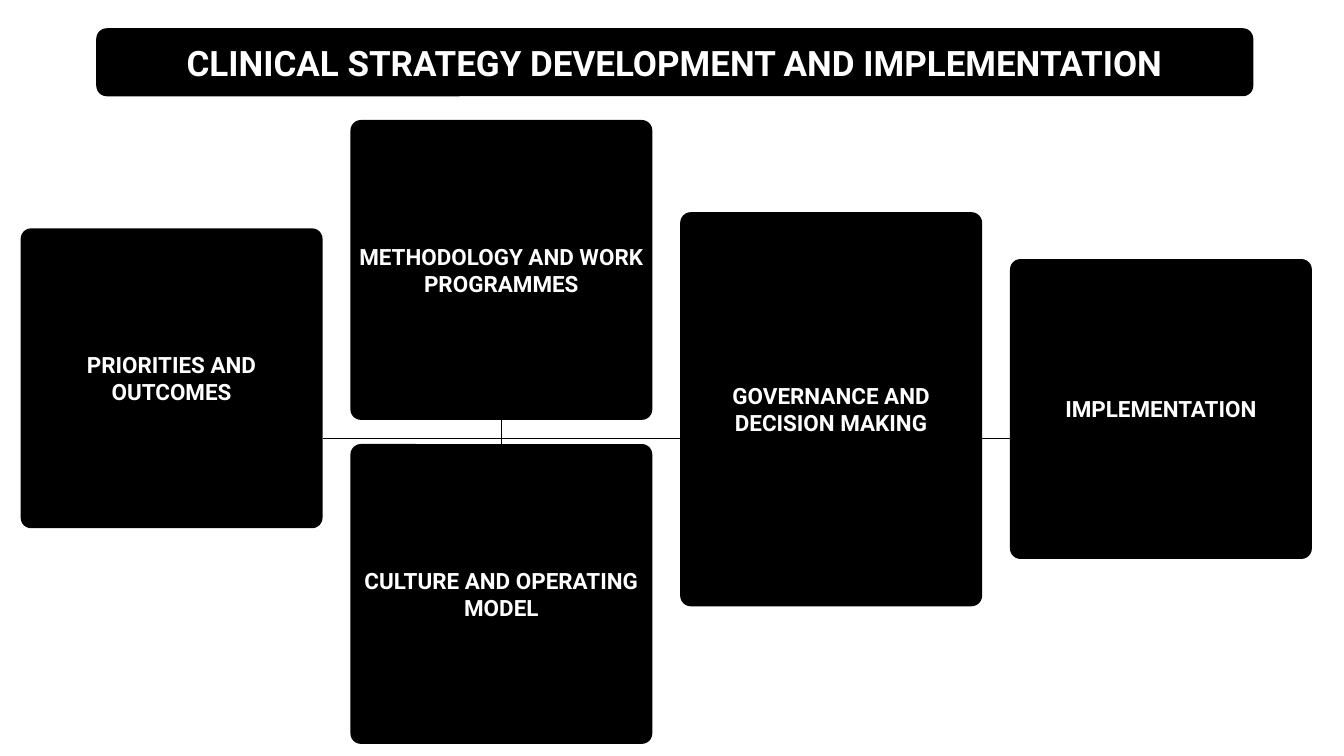
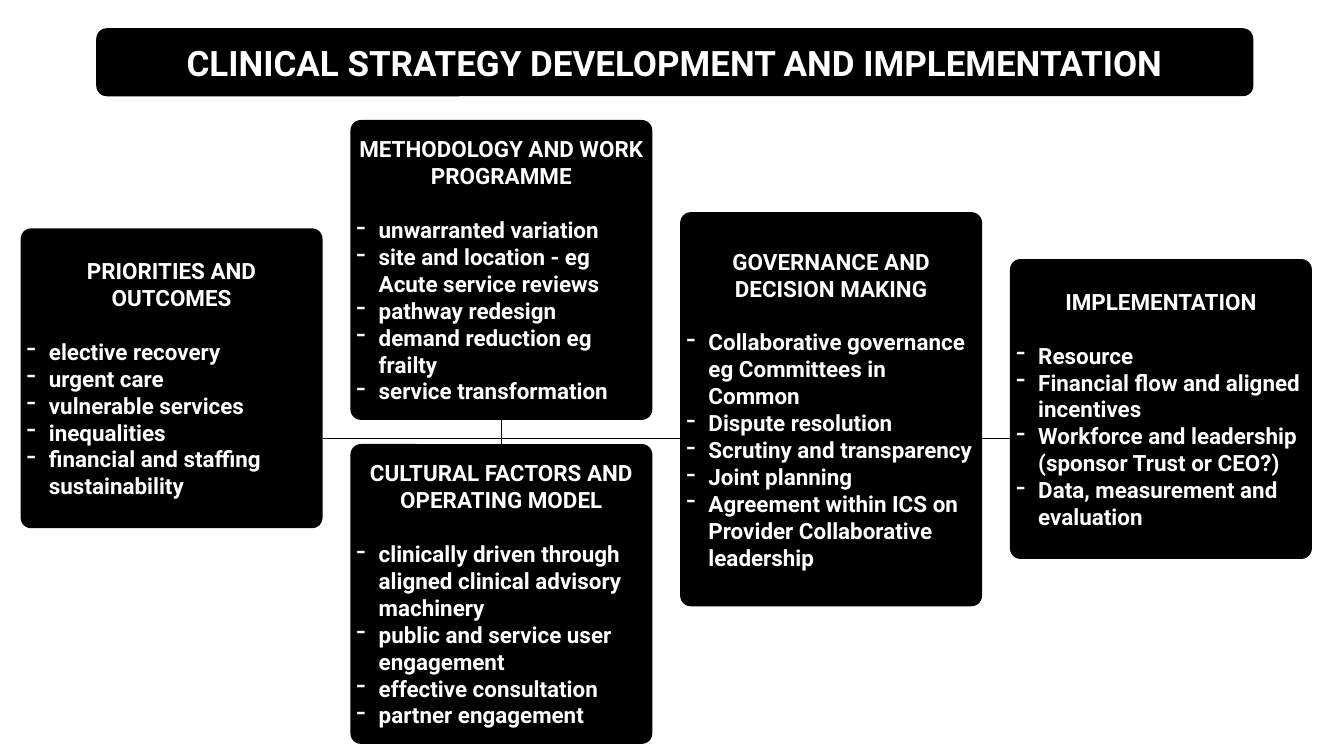
from dataclasses import dataclass

from lxml.etree import SubElement
from pptx import Presentation
from pptx.dml.color import RGBColor
from pptx.enum.shapes import MSO_CONNECTOR, MSO_SHAPE
from pptx.enum.text import MSO_ANCHOR, MSO_AUTO_SIZE, PP_ALIGN
from pptx.oxml.ns import qn
from pptx.util import Pt

COLORS = {"box": "000000", "text": "FFFFFF", "line": "000000", "page": "FFFFFF"}
FONT = "Roboto"
TITLE = "CLINICAL STRATEGY DEVELOPMENT AND IMPLEMENTATION"
BAND = (137.5, 40.3, 1653, 97.2)
LEFT, STEP, WIDTH = 29.5, 471.1, 431.3
SHORT, TALL = 428.4, 563
RULE_Y = 626.4
INSET, HANG, GAP = 4.3, 31.7, 38.5


@dataclass
class Card:
    col: int
    top: float
    brief: str
    head: str
    items: list[str]
    height: float = SHORT


CARDS = [
    Card(0, 326.2, "PRIORITIES AND OUTCOMES", "PRIORITIES AND OUTCOMES",
         ["elective recovery", "urgent care", "vulnerable services",
          "inequalities", "financial and staffing sustainability"]),
    Card(1, 171.4, "METHODOLOGY AND WORK PROGRAMMES",
         "METHODOLOGY AND WORK PROGRAMME",
         ["unwarranted variation", "site and location - eg Acute service reviews",
          "pathway redesign", "demand reduction eg frailty",
          "service transformation"]),
    Card(1, 634.3, "CULTURE AND OPERATING MODEL",
         "CULTURAL FACTORS AND OPERATING MODEL",
         ["clinically driven through aligned clinical advisory machinery",
          "public and service user engagement", "effective consultation",
          "partner engagement"]),
    Card(2, 303.1, "GOVERNANCE AND DECISION MAKING",
         "GOVERNANCE AND DECISION MAKING",
         ["Collaborative governance eg Committees in Common",
          "Dispute resolution", "Scrutiny and transparency", "Joint planning",
          "Agreement within ICS on Provider Collaborative leadership"], TALL),
    Card(3, 370.1, "IMPLEMENTATION", "IMPLEMENTATION",
         ["Resource", "Financial flow and aligned incentives",
          "Workforce and leadership (sponsor Trust or CEO?)",
          "Data, measurement and evaluation"]),
]


def color(name: str) -> RGBColor:
    return RGBColor.from_string(COLORS[name])


def style(para, size: float, align) -> None:
    para.alignment = align
    font = para.font
    font.name, font.size, font.bold = FONT, Pt(size), True
    font.color.rgb = color("text")


def set_frame(frame) -> None:
    frame.word_wrap = True
    frame.auto_size = MSO_AUTO_SIZE.NONE
    frame.vertical_anchor = MSO_ANCHOR.MIDDLE
    frame.margin_left = frame.margin_right = Pt(INSET)
    frame.margin_top = frame.margin_bottom = Pt(INSET)


def add_box(slide, area: tuple, bend: float):
    box = slide.shapes.add_shape(MSO_SHAPE.ROUNDED_RECTANGLE, *map(Pt, area))
    box.adjustments[0] = bend
    box.shadow.inherit = False
    box.fill.solid()
    box.fill.fore_color.rgb = color("box")
    box.line.fill.background()
    return box


def add_title(slide) -> None:
    """Put the title placeholder on a rounded band."""
    title = slide.shapes.title
    band = add_box(slide, BAND, 0.155)
    title._element.addprevious(band._element)
    title.left, title.top, title.width, title.height = map(Pt, BAND)
    set_frame(title.text_frame)
    title.text_frame.text = TITLE
    style(title.text_frame.paragraphs[0], 50, PP_ALIGN.CENTER)


def add_item(frame, text: str) -> None:
    """Add a line with a hanging dash."""
    para = frame.add_paragraph()
    para.text = text
    props = para._p.get_or_add_pPr()
    props.set("marL", str(Pt(HANG)))
    props.set("indent", str(-Pt(HANG)))
    SubElement(props, qn("a:buSzPct"), val="123000")
    SubElement(props, qn("a:buChar"), char="-")
    style(para, 32, PP_ALIGN.LEFT)


def add_card(slide, card: Card, full: bool):
    area = (LEFT + card.col * STEP, card.top, WIDTH, card.height)
    box = add_box(slide, area, 0.035)
    frame = box.text_frame
    set_frame(frame)
    head = frame.paragraphs[0]
    head.text = card.head if full else card.brief
    style(head, 32, PP_ALIGN.CENTER)
    if full:
        head.space_after = Pt(GAP)
        for item in card.items:
            add_item(frame, item)
    return box


def add_line(slide, start: tuple, end: tuple):
    line = slide.shapes.add_connector(
        MSO_CONNECTOR.STRAIGHT, *map(Pt, start + end))
    line.line.color.rgb = color("line")
    line.line.width = Pt(2)
    SubElement(line._element.spPr, qn("a:effectLst"))
    return line


def add_page(deck, full: bool) -> None:
    slide = deck.slides.add_slide(deck.slide_layouts[5])
    slide.background.fill.solid()
    slide.background.fill.fore_color.rgb = color("page")
    add_title(slide)
    boxes = [add_card(slide, card, full) for card in CARDS]
    add_line(slide, (LEFT + WIDTH, RULE_Y), (LEFT + 3 * STEP, RULE_Y))
    link = add_line(slide, (0, 0), (0, 0))
    link.begin_connect(boxes[1], 2)
    link.end_connect(boxes[2], 0)


def main() -> None:
    deck = Presentation()
    deck.slide_width, deck.slide_height = Pt(1920), Pt(1080)
    for full in (False, True):
        add_page(deck, full)
    deck.save("out.pptx")


if __name__ == "__main__":
    main()
